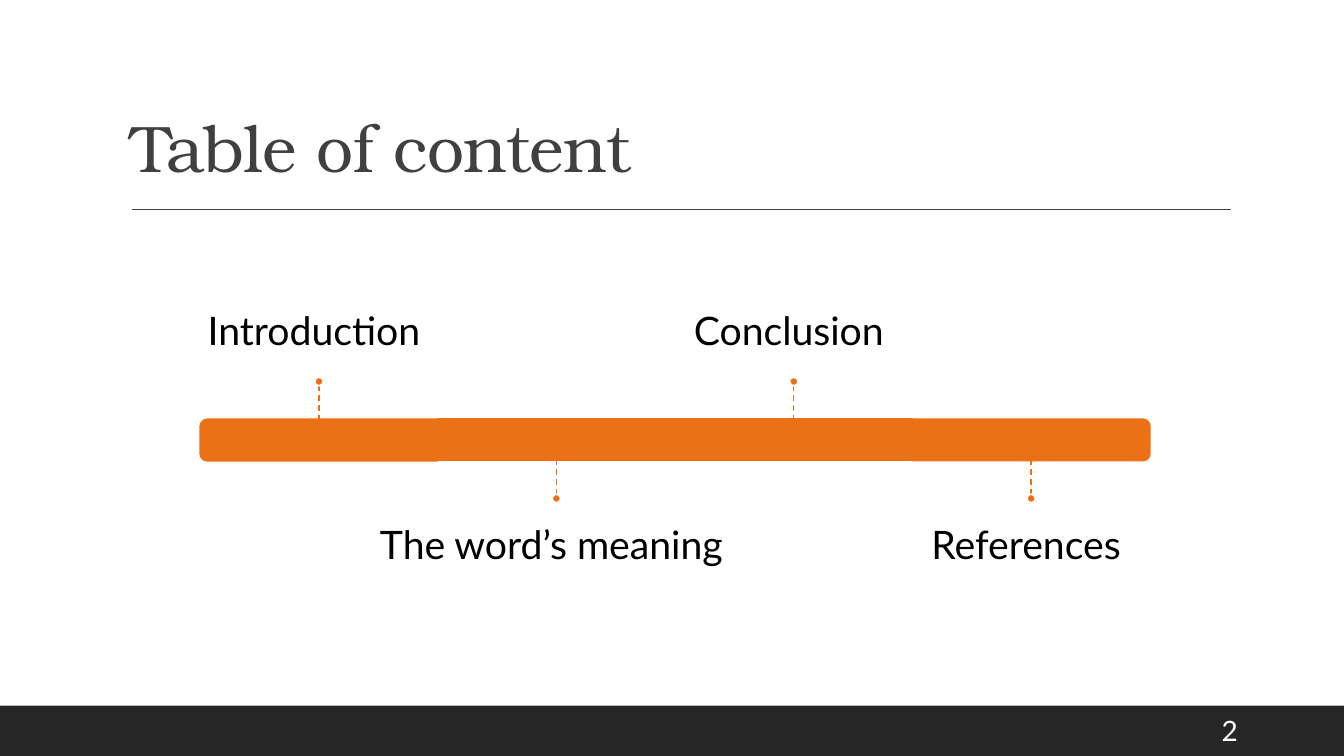
from dataclasses import dataclass

from lxml.etree import SubElement
from pptx import Presentation
from pptx.dml.color import RGBColor
from pptx.enum.dml import MSO_LINE
from pptx.enum.shapes import MSO_CONNECTOR, MSO_SHAPE
from pptx.enum.text import MSO_ANCHOR, PP_ALIGN
from pptx.oxml.ns import qn
from pptx.util import Emu, Inches, Pt

# Grid: 160 columns by 90 rows of square cells
COLUMNS, ROWS = 160, 90
CELL = Inches(7.5) // ROWS
COLORS = {"accent": "EC7016", "footer": "262626", "rule": "404040",
          "white": "FFFFFF", "black": "000000"}

# Timeline measures, in grid cells
BAR_LEFT, BAR_TOP, BAR_HEIGHT = 23.85, 49.92, 4.92
SEGMENT_WIDTH = 28.26
STEM, DOT = 4, 1
LABEL_WIDTH, LABEL_HEIGHT, LABEL_GAP = 47.1, 17.4, 2.76
TOP_SIDE, BOTTOM_SIDE = 0, 2


@dataclass(frozen=True)
class Area:
    left: float
    top: float
    width: float
    height: float

    def emu(self) -> list[Emu]:
        return [cells(n) for n in (self.left, self.top, self.width, self.height)]


@dataclass(frozen=True)
class Topic:
    label: str
    above: bool
    rotation: int | None = None  # set on the rounded ends only


TOPICS = [
    Topic("Introduction ", above=True, rotation=270),
    Topic("The word’s meaning ", above=False),
    Topic("Conclusion ", above=True),
    Topic("References ", above=False, rotation=90),
]


def cells(count: float) -> Emu:
    return Emu(round(count * CELL))


def color(name: str) -> RGBColor:
    return RGBColor.from_string(COLORS[name])


def add_block(page, kind, area: Area, fill: str, outline: str | None = None):
    block = page.shapes.add_shape(kind, *area.emu())
    block.shadow.inherit = False
    block.fill.solid()
    block.fill.fore_color.rgb = color(fill)
    if outline:
        block.line.color.rgb = color(outline)
        block.line.width = Pt(1.25)
    else:
        block.line.fill.background()
    return block


def add_line(page, start: tuple[float, float], end: tuple[float, float],
             stroke: str, dash=None):
    line = page.shapes.add_connector(
        MSO_CONNECTOR.STRAIGHT, *map(cells, start), *map(cells, end))
    SubElement(line._element.spPr, qn("a:effectLst"))
    line.line.color.rgb = color(stroke)
    line.line.width = Pt(1)
    if dash:
        line.line.dash_style = dash
    return line


def add_text(page, area: Area, text: str, font: dict, ink: str,
             frame: dict, paragraph: dict):
    box = page.shapes.add_textbox(*area.emu())
    para = box.text_frame.paragraphs[0]
    span = para.add_run()
    span.text = text
    formats = [(box.text_frame, {"word_wrap": True, **frame}),
               (para, paragraph), (span.font, font)]
    for target, values in formats:
        for name, value in values.items():
            setattr(target, name, value)
    span.font.color.rgb = color(ink)
    return span


def add_topic(page, index: int, topic: Topic) -> None:
    left = BAR_LEFT + index * SEGMENT_WIDTH
    center = left + SEGMENT_WIDTH / 2

    # Bar segment: rounded ends are drawn upright, then turned
    if topic.rotation is None:
        segment = add_block(page, MSO_SHAPE.RECTANGLE,
                            Area(left, BAR_TOP, SEGMENT_WIDTH, BAR_HEIGHT),
                            "accent", "accent")
    else:
        upright = Area(center - BAR_HEIGHT / 2,
                       BAR_TOP + (BAR_HEIGHT - SEGMENT_WIDTH) / 2,
                       BAR_HEIGHT, SEGMENT_WIDTH)
        segment = add_block(page, MSO_SHAPE.ROUND_2_SAME_RECTANGLE, upright,
                            "accent", "accent")
        segment.rotation = topic.rotation

    # Vertical places on the chosen side of the bar
    if topic.above:
        edge, side = BAR_TOP, TOP_SIDE
        tip = edge - STEM
        dot_top = tip - DOT
        label_top = dot_top - LABEL_HEIGHT
        anchor, gap_side = MSO_ANCHOR.BOTTOM, "margin_bottom"
    else:
        edge, side = BAR_TOP + BAR_HEIGHT, BOTTOM_SIDE
        tip = dot_top = edge + STEM
        label_top = dot_top + DOT
        anchor, gap_side = MSO_ANCHOR.TOP, "margin_top"

    # Label, stem and dot
    margins = dict.fromkeys(
        ("margin_left", "margin_top", "margin_right", "margin_bottom"), 0)
    margins[gap_side] = cells(LABEL_GAP)
    add_text(page,
             Area(center - LABEL_WIDTH / 2, label_top, LABEL_WIDTH, LABEL_HEIGHT),
             topic.label, {"name": "Lato", "size": Pt(28)}, "black",
             {"vertical_anchor": anchor, **margins},
             {"alignment": PP_ALIGN.CENTER, "line_spacing": 0.9})
    stem = add_line(page, (center, tip), (center, edge), "accent", MSO_LINE.DASH)
    if topic.rotation is None:
        stem.end_connect(segment, side)
    add_block(page, MSO_SHAPE.OVAL, Area(center - DOT / 2, dot_top, DOT, DOT),
              "accent", "white")


def main() -> None:
    deck = Presentation()
    deck.slide_width, deck.slide_height = cells(COLUMNS), cells(ROWS)
    page = deck.slides.add_slide(deck.slide_layouts[6])

    # Footer band and title
    add_block(page, MSO_SHAPE.RECTANGLE, Area(0, 84, COLUMNS, 6), "footer")
    add_line(page, (15.72, 24.96), (146.52, 24.96), "rule")
    title = add_text(page, Area(14.4, 3.72, 132, 19.08), "Table of content",
                     {"name": "TeX Gyre Bonum", "size": Pt(47)}, "rule",
                     {"vertical_anchor": MSO_ANCHOR.BOTTOM},
                     {"line_spacing": 0.9})
    title.font._element.set("spc", "-50")

    # Timeline
    for index, topic in enumerate(TOPICS):
        add_topic(page, index, topic)

    # Page number
    add_text(page, Area(144.24, 84.6, 10.2, 4.8), "2",
             {"name": "Lato", "size": Pt(20)}, "white",
             {"vertical_anchor": MSO_ANCHOR.MIDDLE}, {})

    deck.save("out.pptx")


if __name__ == "__main__":
    main()
